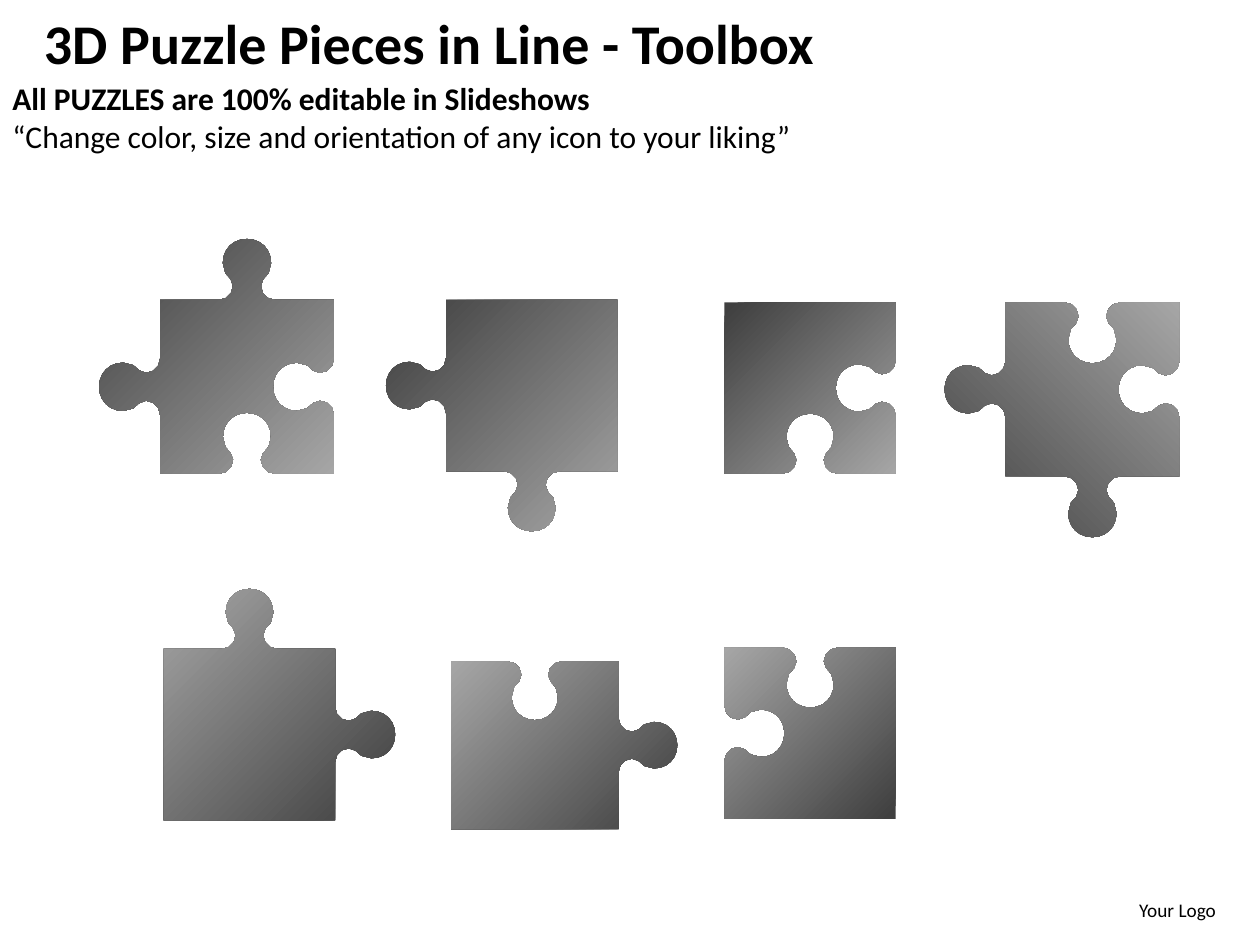
from pptx import Presentation
from pptx import util as u
from pptx.dml.color import RGBColor
from pptx.enum import text

THEME = {
    "font": "Calibri", "ink": "000000", "dark": "404040", "light": "A6A6A6",
    "title": 32, "body": 18, "foot": 11,
}

# left, top, side, tabs (top, right, bottom, left: 1 out, -1 in, 0 flat), angle
PIECES = [
    (1.27, 2.38, 1.38, (1, -1, -1, 1), 315),
    (3.54, 2.38, 1.36, (0, 0, 1, 1), 315),
    (5.75, 2.40, 1.36, (0, -1, -1, 0), 315),
    (7.98, 2.40, 1.38, (-1, -1, 1, 1), 45),
    (1.30, 5.15, 1.36, (1, 1, 0, 0), 135),
    (3.58, 5.25, 1.33, (-1, 1, 0, 0), 135),
    (5.75, 5.14, 1.36, (-1, 0, 0, -1), 135),
]

TEXTS = [
    ((0, 0.58, 6.46, 0.71), "body", "LEFT", False, [
        ("All PUZZLES are 100% editable in Slideshows", True),
        ("“Change color, size and orientation of any icon to your liking”", False),
    ]),
    ((0.25, 0.02, 9.75, 0.64), "title", "LEFT", True,
     [("3D Puzzle Pieces in Line - Toolbox", True)]),
    ((8.58, 7.08, 1.17, 0.29), "foot", "RIGHT", True, [("Your Logo", False)]),
]

BASE = 1.37
CURVES = [
    (3, (-0.22, 0), (-0.16, 0), (-0.11, 0.05), (-0.11, 0.11)),
    (2, (-0.11, 0.11), (-0.11, 0.16), (-0.14, 0.17), (-0.17, 0.21)),
    (1, (-0.17, 0.21), (-0.18, 0.24), (-0.19, 0.26), (-0.19, 0.29)),
    (6, (-0.19, 0.29), (-0.19, 0.40), (-0.11, 0.48), (0, 0.48)),
]


def bezier(a, b, c, d, t):
    s = 1 - t
    return tuple(s**3 * p + 3 * s * s * t * q + 3 * s * t * t * r + t**3 * e
                 for p, q, r, e in zip(a, b, c, d))


def knob():
    half = [CURVES[0][1]]
    half += [bezier(*curve, n / steps) for steps, *curve in CURVES
             for n in range(1, steps + 1)]
    return half + [(-x, y) for x, y in half[-2::-1]]


def outline(left, top, side, tabs):
    size = side / BASE
    x, y, dx, dy = left, top, 1, 0
    points = []
    for tab in tabs:
        points.append((x, y))
        if tab:
            for along, out in KNOB:
                run, rise = side / 2 + along * size, out * size * tab
                points.append((x + dx * run + dy * rise,
                               y + dy * run - dx * rise))
        x, y = x + dx * side, y + dy * side
        dx, dy = -dy, dx
    return [(u.Inches(px), u.Inches(py)) for px, py in points]


def add_piece(slide, left, top, side, tabs, angle):
    first, *rest = outline(left, top, side, tabs)
    pen = slide.shapes.build_freeform(*first)
    pen.add_line_segments(rest, close=True)
    shape = pen.convert_to_shape()
    shape.shadow.inherit = False
    shape.line.fill.background()
    shape.fill.gradient()
    shape.fill.gradient_angle = angle
    stops = zip(shape.fill.gradient_stops, ("dark", "light"), (0.02, 1))
    for stop, tone, place in stops:
        stop.color.rgb = RGBColor.from_string(THEME[tone])
        stop.position = place


def add_text(slide, box, size, align, wrap, lines):
    frame = slide.shapes.add_textbox(*map(u.Inches, box)).text_frame
    frame.word_wrap = wrap
    frame.auto_size = text.MSO_AUTO_SIZE.SHAPE_TO_FIT_TEXT
    for n, (words, bold) in enumerate(lines):
        para = frame.add_paragraph() if n else frame.paragraphs[0]
        para.alignment = text.PP_ALIGN[align]
        run = para.add_run()
        run.text = words
        run.font.name = THEME["font"]
        run.font.size = u.Pt(THEME[size])
        run.font.bold = bold
        run.font.color.rgb = RGBColor.from_string(THEME["ink"])


KNOB = knob()


def main():
    deck = Presentation()
    deck.slide_width, deck.slide_height = u.Inches(10), u.Inches(7.5)
    slide = deck.slides.add_slide(deck.slide_layouts[6])
    for piece in PIECES:
        add_piece(slide, *piece)
    for item in TEXTS:
        add_text(slide, *item)
    deck.save("out.pptx")


if __name__ == "__main__":
    main()
